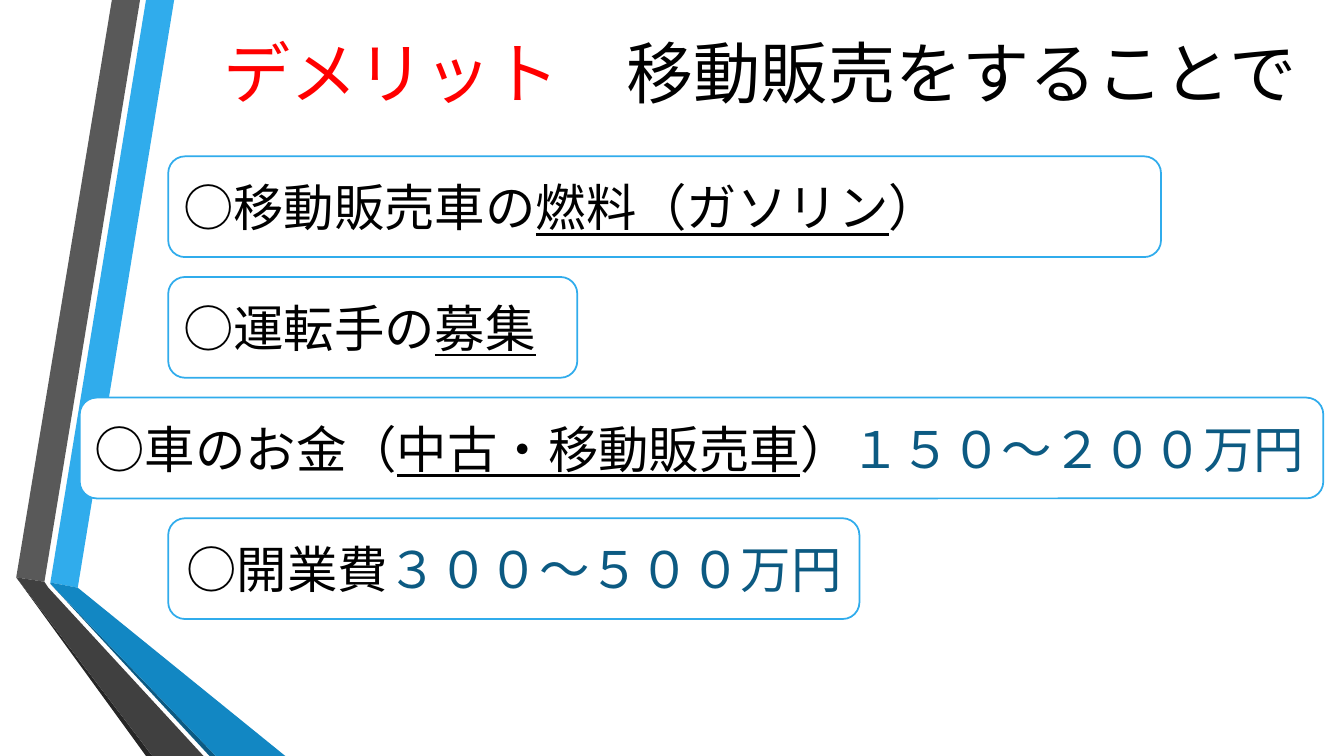
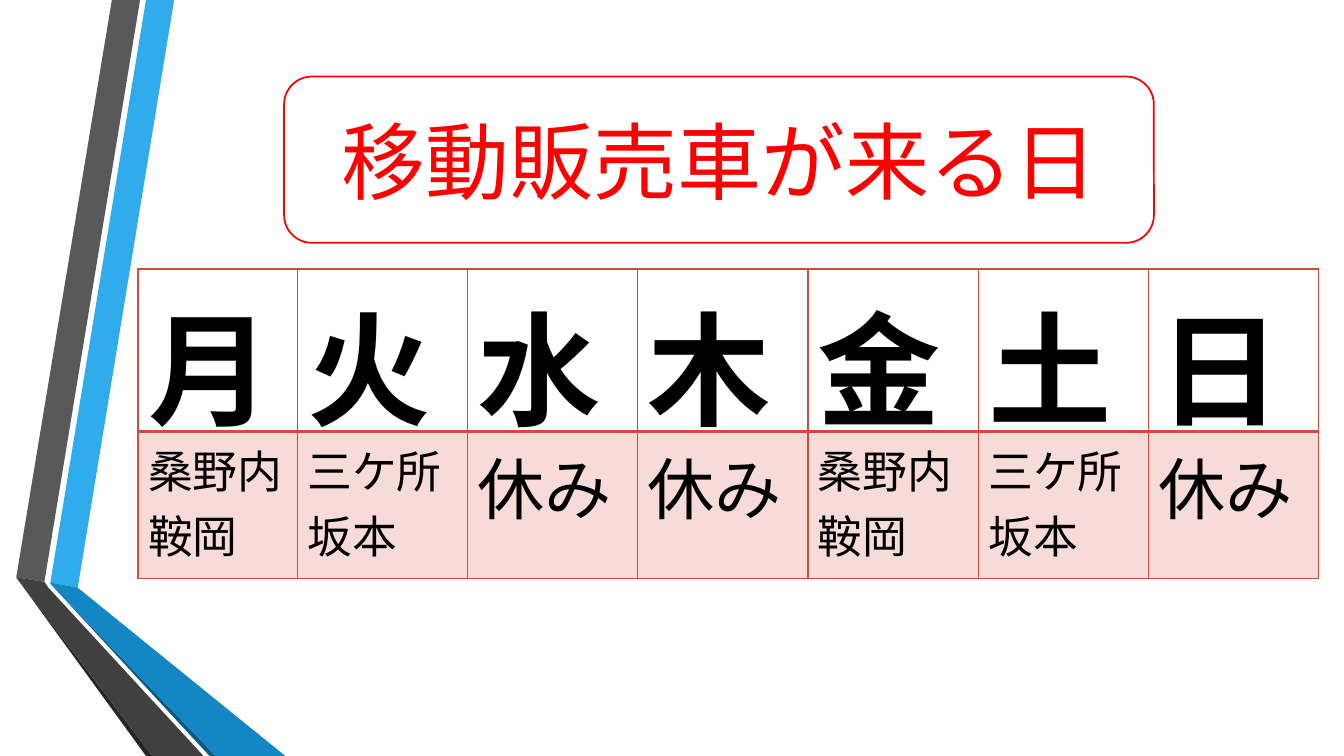
import lxml.etree
import pptx
import pptx.dml.color
import pptx.enum.shapes
import pptx.enum.text
import pptx.oxml.ns
import pptx.util

Cm = pptx.util.Cm
Pt = pptx.util.Pt
RGBColor = pptx.dml.color.RGBColor
Align = pptx.enum.text.PP_ALIGN
qn = pptx.oxml.ns.qn

BLACK = RGBColor(0x00, 0x00, 0x00)
WHITE = RGBColor(0xFF, 0xFF, 0xFF)
RED = RGBColor(0xFF, 0x00, 0x00)
SKY = RGBColor(0x30, 0xAC, 0xEC)
BLUE = RGBColor(0x12, 0x87, 0xC3)
NAVY = RGBColor(0x0C, 0x5A, 0x82)
GREY = RGBColor(0x59, 0x59, 0x59)
CHARCOAL = RGBColor(0x40, 0x40, 0x40)
INK = RGBColor(0x26, 0x26, 0x26)
BRICK = RGBColor(0xD6, 0x4A, 0x3B)
BLUSH = RGBColor(0xF7, 0xDB, 0xD8)

LATIN = "Cabin"
JAPANESE = "Noto Sans CJK JP"

RIBBONS = [
    (SKY, [(127, 1468), (196, 1481), (439, 0), (368, 0)]),
    (GREY, [(353, 0), (282, 0), (41, 1455), (112, 1466)]),
    (INK, [(41, 1455), (368, 1905), (384, 1905)]),
    (NAVY, [(127, 1471), (528, 1905), (544, 1905)]),
    (BLUE, [(127, 1468), (127, 1471), (544, 1905), (719, 1905), (196, 1481)]),
    (CHARCOAL, [(513, 1905), (122, 1481), (112, 1466), (41, 1455), (384, 1905)]),
]

COSTS = [
    (4.24, 25.02, Align.LEFT,
     [("○移動販売車の", BLACK, False), ("燃料（ガソリン", BLACK, True), ("）", BLACK, False)]),
    (4.24, 10.31, Align.LEFT,
     [("○運転手の", BLACK, False), ("募集", BLACK, True)]),
    (2.01, 31.34, Align.LEFT,
     [("○車のお金（", BLACK, False), ("中古・移動販売車", BLACK, True),
      ("）", BLACK, False), ("１５０～２００万円", NAVY, False)]),
    (4.24, 17.42, Align.CENTER,
     [("○開業費", BLACK, False), ("３００～５００万円", NAVY, False)]),
]

NORTH = ["桑野内", "鞍岡"]
SOUTH = ["三ケ所", "坂本"]
CLOSED = ["休み"]
WEEK = [("月", NORTH), ("火", SOUTH), ("水", CLOSED), ("木", CLOSED),
        ("金", NORTH), ("土", SOUTH), ("日", CLOSED)]


class Deck:
    """Holds the shared style and the slide being built."""

    def __init__(self):
        self.presentation = pptx.Presentation()
        self.presentation.slide_width = Cm(33.87)
        self.presentation.slide_height = Cm(19.05)
        self.slide = None

    def new_slide(self):
        self.slide = self.presentation.slides.add_slide(self.presentation.slide_layouts[6])
        for colour, corners in RIBBONS:
            outline = self.slide.shapes.build_freeform(*corners[0], scale=Cm(0.01))
            outline.add_line_segments(corners[1:], close=True)
            ribbon = outline.convert_to_shape()
            ribbon.shadow.inherit = False
            ribbon.fill.solid()
            ribbon.fill.fore_color.rgb = colour
            ribbon.line.fill.background()

    def style_run(self, run, size, colour=BLACK, underline=False, bold=False, latin=LATIN):
        run.font.size = Pt(size)
        run.font.name = latin
        run.font.color.rgb = colour
        run.font.bold = bold
        run.font.underline = underline
        east_asian = lxml.etree.Element(qn("a:ea"), typeface=JAPANESE)
        run.font._element.find(qn("a:latin")).addnext(east_asian)

    def add_runs(self, paragraph, pieces, size, latin=LATIN):
        for wording, colour, underline in pieces:
            run = paragraph.add_run()
            run.text = wording
            self.style_run(run, size, colour, underline, latin=latin)

    def title(self, pieces):
        heading = self.slide.shapes.add_textbox(Cm(5.38), Cm(0.66), Cm(27.94), Cm(2.31))
        frame = heading.text_frame
        frame.word_wrap = True
        frame.auto_size = pptx.enum.text.MSO_AUTO_SIZE.SHAPE_TO_FIT_TEXT
        self.add_runs(frame.paragraphs[0], pieces, 48)

    def rounded_box(self, left, top, width, height, border, pieces, size,
                    align=Align.CENTER, latin=LATIN):
        box = self.slide.shapes.add_shape(
            pptx.enum.shapes.MSO_SHAPE.ROUNDED_RECTANGLE,
            Cm(left), Cm(top), Cm(width), Cm(height))
        box.shadow.inherit = False
        box.fill.solid()
        box.fill.fore_color.rgb = WHITE
        box.line.color.rgb = border
        box.line.width = Pt(1.25)
        frame = box.text_frame
        frame.word_wrap = True
        frame.vertical_anchor = pptx.enum.text.MSO_ANCHOR.MIDDLE
        frame.paragraphs[0].alignment = align
        self.add_runs(frame.paragraphs[0], pieces, size, latin)

    def cell_borders(self, cell, top, bottom):
        properties = cell._tc.get_or_add_tcPr()
        edges = [("a:lnL", 1), ("a:lnR", 1), ("a:lnT", top), ("a:lnB", bottom)]
        for position, (edge, width) in enumerate(edges):
            border = lxml.etree.Element(qn(edge), w=str(Pt(width)))
            fill = lxml.etree.SubElement(border, qn("a:solidFill"))
            lxml.etree.SubElement(fill, qn("a:srgbClr"), val=str(BRICK))
            properties.insert(position, border)

    def cell(self, cell, lines, size, bold=False):
        cell.text_frame.text = "\n".join(lines)
        for paragraph in cell.text_frame.paragraphs:
            for run in paragraph.runs:
                self.style_run(run, size, bold=bold)

    def timetable(self, week):
        table = self.slide.shapes.add_table(
            2, len(week), Cm(3.48), Cm(6.78), Cm(29.72), Cm(7.8)).table
        table.first_row = False
        table.horz_banding = False
        table.rows[0].height = Cm(4.09)
        table.rows[1].height = Cm(3.71)
        for index, (day, places) in enumerate(week):
            table.columns[index].width = Cm(4.29 if index else 4.01)
            day_cell, places_cell = table.cell(0, index), table.cell(1, index)
            self.cell(day_cell, [day], 88, bold=True)
            day_cell.fill.background()
            self.cell_borders(day_cell, 1, 2)
            self.cell(places_cell, places, 48 if places is CLOSED else 32)
            places_cell.fill.solid()
            places_cell.fill.fore_color.rgb = BLUSH
            self.cell_borders(places_cell, 2, 1)


def main():
    deck = Deck()

    deck.new_slide()
    deck.title([("デメリット　", RED, False), ("移動販売をすることで", BLACK, False)])
    for row, (left, width, align, pieces) in enumerate(COSTS):
        deck.rounded_box(left, 3.94 + 3.04 * row, width, 2.54, SKY, pieces, 36, align)

    deck.new_slide()
    deck.timetable(WEEK)
    deck.rounded_box(7.16, 1.93, 21.92, 4.19, RED,
                     [("移動販売車が来る日", RED, False)], 60, latin=JAPANESE)

    deck.presentation.save("out.pptx")


if __name__ == "__main__":
    main()
